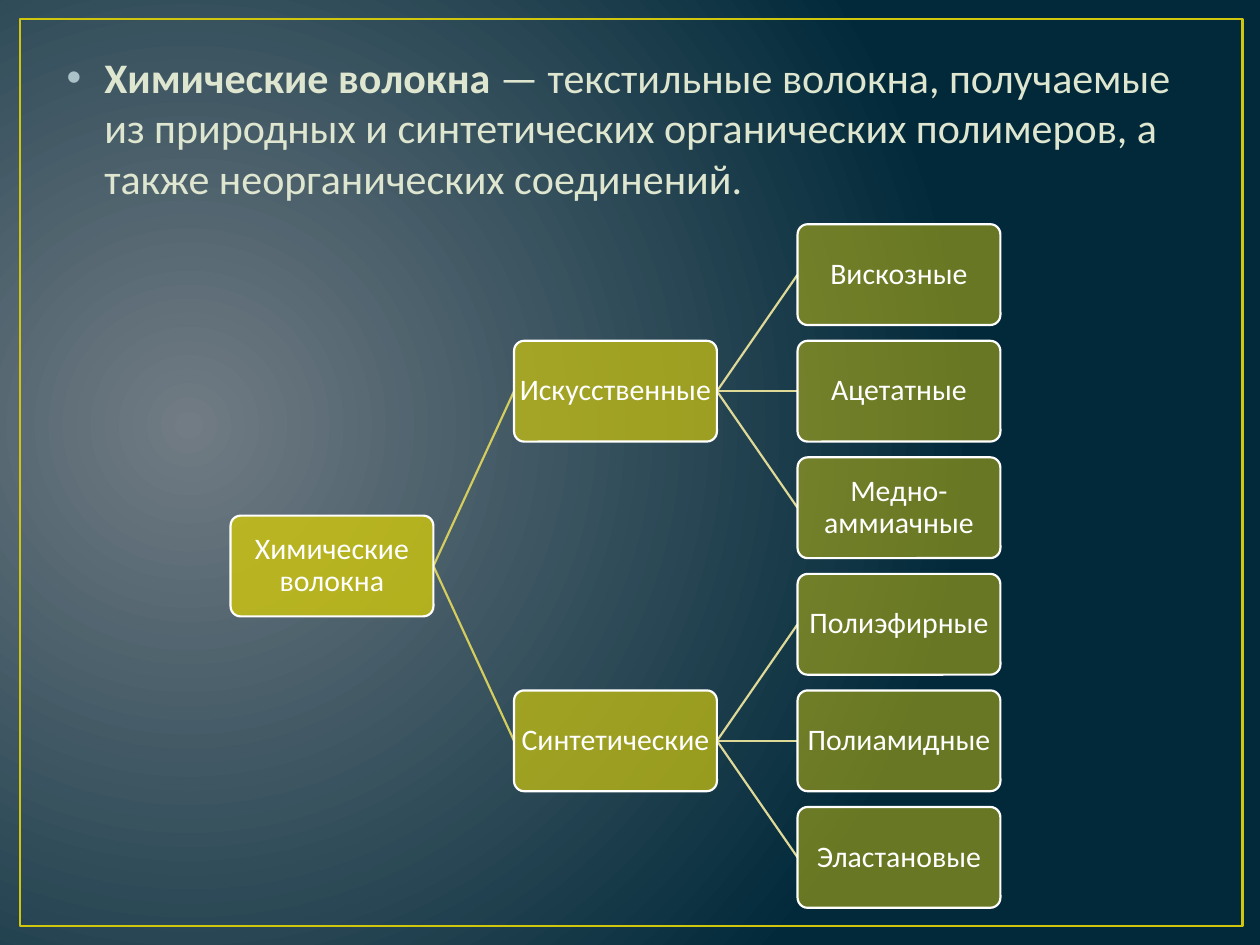
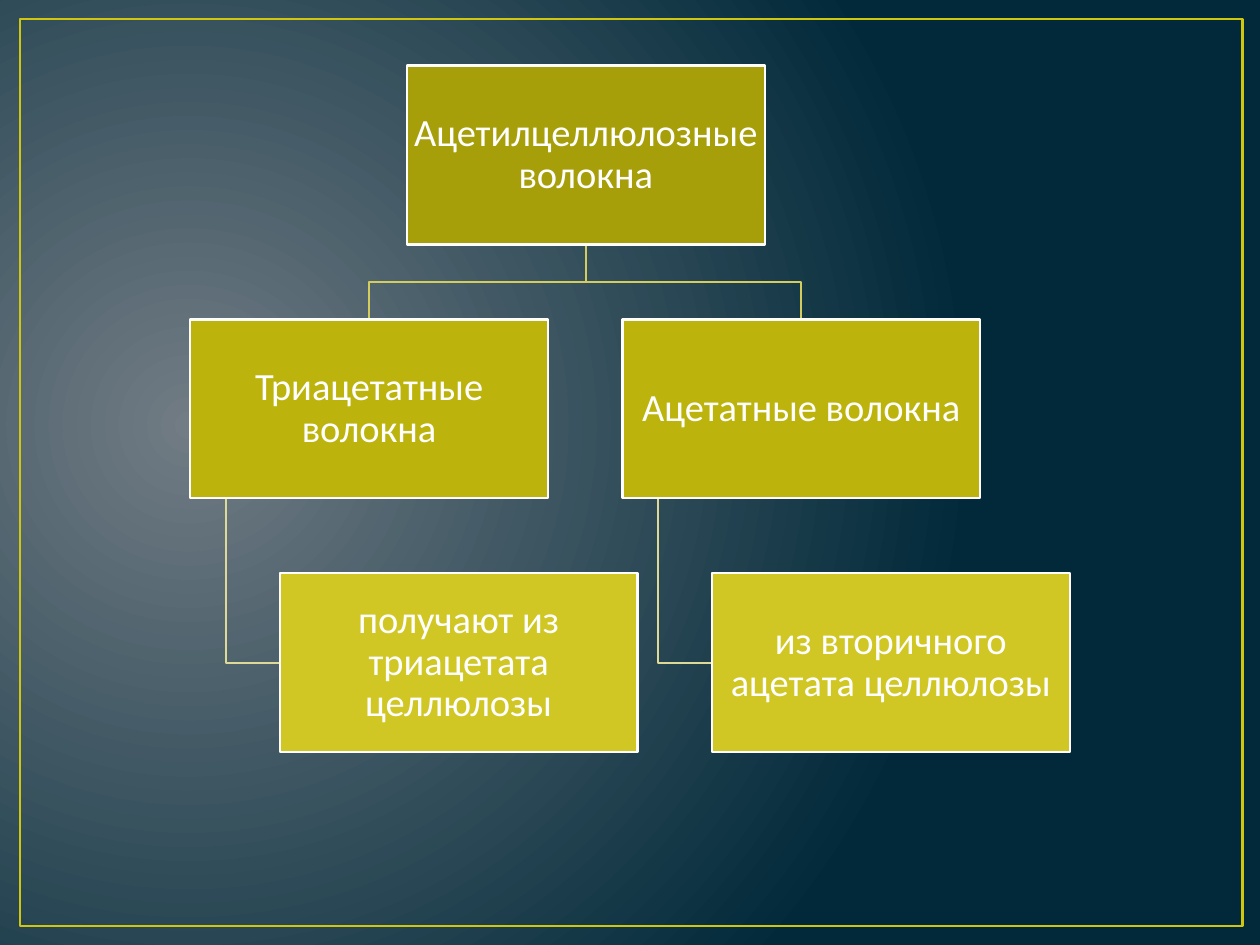
from lxml import etree
from pptx import Presentation
from pptx import util as u
from pptx.dml.color import RGBColor
from pptx.enum import shapes, text
from pptx.oxml.ns import qn

COLORS = {
    "glow": "717C84",
    "night": "01293A",
    "olive": "CFC60D",
    "white": "FFFFFF",
    "body": "DFE6D0",
    "bullet": "ACC2C9",
    "line_upper": "D4CD5E",
    "line_lower": "DFD997",
    "box_top": "A69F0A",
    "box_middle": "BCB40C",
    "box_bottom": "D0C724",
}
FONT = "Calibri"


def color(name):
    return RGBColor.from_string(COLORS[name])


def add_box(slide, kind, left, top, size, words, fill, font_size, inset):
    shape = slide.shapes.add_shape(kind, u.Inches(left), u.Inches(top), *map(u.Inches, size))
    shape.shadow.inherit = False
    shape.fill.solid()
    shape.fill.fore_color.rgb = color(fill)
    shape.line.color.rgb = color("white")
    shape.line.width = u.Pt(1.25)
    frame = shape.text_frame
    frame.word_wrap = True
    frame.vertical_anchor = text.MSO_ANCHOR.MIDDLE
    frame.margin_left = frame.margin_right = u.Inches(inset)
    frame.margin_top = frame.margin_bottom = u.Inches(inset)
    frame.text = words
    paragraph = frame.paragraphs[0]
    paragraph.alignment = text.PP_ALIGN.CENTER
    paragraph.line_spacing = 0.9
    paragraph.font.name = FONT
    paragraph.font.size = u.Pt(font_size)
    paragraph.font.color.rgb = color("white")
    return shape


presentation = Presentation()
presentation.slide_width = u.Inches(10)
presentation.slide_height = u.Inches(7.5)

background = presentation.slide_master.background.fill
background.gradient()
for stop, name in zip(background.gradient_stops, ("glow", "night")):
    stop.color.rgb = color(name)
gradient = presentation.slide_master.element.find(".//" + qn("p:bgPr")).find(qn("a:gradFill"))
for linear in gradient.findall(qn("a:lin")):
    gradient.remove(linear)
circle = etree.SubElement(gradient, qn("a:path"), path="circle")
etree.SubElement(circle, qn("a:fillToRect"), l="15000", t="50000", r="85000", b="60000")

slides = []
for number in range(2):
    slide = presentation.slides.add_slide(presentation.slide_layouts[6])
    border = slide.shapes.add_shape(
        shapes.MSO_SHAPE.RECTANGLE, u.Inches(0.16), u.Inches(0.15), u.Inches(9.7), u.Inches(7.2))
    border.shadow.inherit = False
    border.fill.background()
    border.line.color.rgb = color("olive")
    border.line.width = u.Pt(1.5)
    slides.append(slide)
fibre_slide, acetate_slide = slides

definition = fibre_slide.shapes.add_textbox(
    u.Inches(0.43), u.Inches(0.36), u.Inches(9), u.Inches(1.4))
definition.text_frame.word_wrap = True
paragraph = definition.text_frame.paragraphs[0]
for words, bold in (
    ("Химические волокна", True),
    (" — текстильные волокна, получаемые из природных и синтетических "
     "органических полимеров, а также неорганических соединений.", False),
):
    run = paragraph.add_run()
    run.text = words
    run.font.name = FONT
    run.font.size = u.Pt(24)
    run.font.bold = bold
    run.font.color.rgb = color("body")
properties = paragraph._p.get_or_add_pPr()
properties.set("marL", str(u.Inches(0.3)))
properties.set("indent", str(u.Inches(-0.3)))
bullet_color = etree.SubElement(properties, qn("a:buClr"))
etree.SubElement(bullet_color, qn("a:srgbClr"), val=COLORS["bullet"])
etree.SubElement(properties, qn("a:buFont"), typeface="Arial")
etree.SubElement(properties, qn("a:buChar"), char="•")

fibre_size = (1.61, 0.8)
column_lefts = [1.83 + 2.25 * level for level in range(3)]
opacities = (80, 70, 50)
first_top, row_step = 1.78, 0.925
families = {
    "Искусственные": ("Вискозные", "Ацетатные", "Медно-аммиачные"),
    "Синтетические": ("Полиэфирные", "Полиамидные", "Эластановые"),
}
fibre_nodes = [("Химические волокна", 0, 2.5)]
fibre_links = []
for family_index, (family, members) in enumerate(families.items()):
    family_row = 3 * family_index + 1
    fibre_nodes.append((family, 1, family_row))
    fibre_links.append((0, 2.5, family_row))
    for member_index, member in enumerate(members):
        member_row = 3 * family_index + member_index
        fibre_nodes.append((member, 2, member_row))
        fibre_links.append((1, family_row, member_row))

for level, start_row, end_row in fibre_links:
    start_y, end_y = (first_top + row * row_step + fibre_size[1] / 2 for row in (start_row, end_row))
    connector = fibre_slide.shapes.add_connector(
        shapes.MSO_CONNECTOR.STRAIGHT,
        u.Inches(column_lefts[level] + fibre_size[0]), u.Inches(start_y),
        u.Inches(column_lefts[level + 1]), u.Inches(end_y))
    connector.line.color.rgb = color(("line_upper", "line_lower")[level])
    connector.line.width = u.Pt(1.25)
    etree.SubElement(connector._element.spPr, qn("a:effectLst"))

for words, level, row in fibre_nodes:
    box = add_box(fibre_slide, shapes.MSO_SHAPE.ROUNDED_RECTANGLE, column_lefts[level],
                  first_top + row * row_step, fibre_size, words, "olive", 17, 0.01)
    box.adjustments[0] = 0.1
    fill_color = box._element.spPr.find(qn("a:solidFill")).find(qn("a:srgbClr"))
    etree.SubElement(fill_color, qn("a:alpha"), val=str(opacities[level] * 1000))

acetate_size = width, height = (2.84, 1.42)
level_tops = [0.52 + 2.015 * level for level in range(3)]
root_left = 3.23
root_center = root_left + width / 2
root_bottom = level_tops[0] + height
bend_y = (root_bottom + level_tops[1]) / 2
acetate_nodes = [("Ацетилцеллюлозные волокна", root_left, 0)]
acetate_links = []
for left, branch, origin in (
    (1.51, "Триацетатные волокна", "получают из триацетата целлюлозы"),
    (4.94, "Ацетатные волокна", "из вторичного ацетата целлюлозы"),
):
    origin_left = left + width / 4
    stem_x = left + width / 10
    origin_middle = level_tops[2] + height / 2
    branch_center = left + width / 2
    acetate_nodes += [(branch, left, 1), (origin, origin_left, 2)]
    acetate_links += [
        ("line_lower", [(stem_x, level_tops[1] + height), (stem_x, origin_middle),
                        (origin_left, origin_middle)]),
        ("line_upper", [(root_center, root_bottom), (root_center, bend_y),
                        (branch_center, bend_y), (branch_center, level_tops[1])]),
    ]

for line_color, points in acetate_links:
    start, *bends = [(u.Inches(x), u.Inches(y)) for x, y in points]
    builder = acetate_slide.shapes.build_freeform(*start)
    builder.add_line_segments(bends, close=False)
    link = builder.convert_to_shape()
    link.shadow.inherit = False
    link.fill.background()
    link.line.color.rgb = color(line_color)
    link.line.width = u.Pt(1.25)

for words, left, level in acetate_nodes:
    add_box(acetate_slide, shapes.MSO_SHAPE.RECTANGLE, left, level_tops[level], acetate_size,
            words, ("box_top", "box_middle", "box_bottom")[level], 22, 0.02)

presentation.save("out.pptx")
